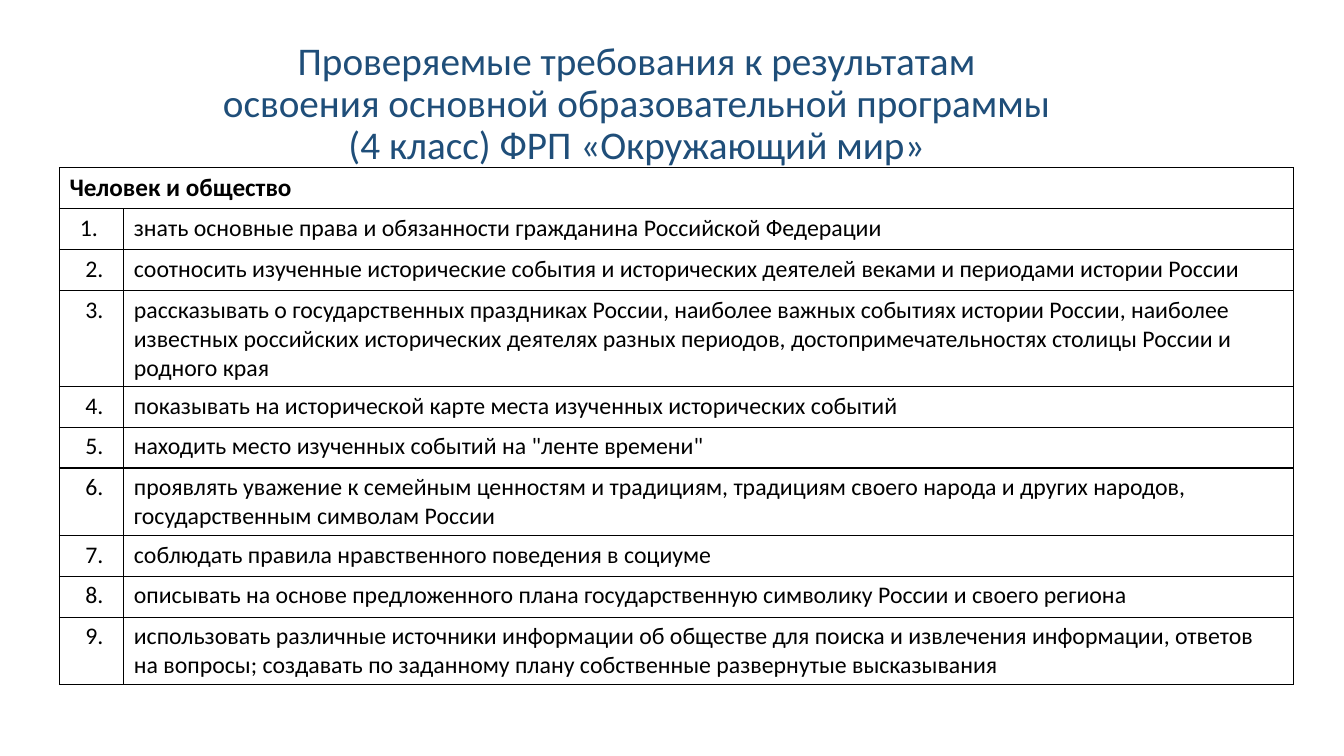
from lxml.etree import SubElement
from pptx import Presentation
from pptx.dml.color import RGBColor
from pptx.enum.text import MSO_ANCHOR, PP_ALIGN
from pptx.oxml.ns import qn
from pptx.util import Cm, Pt

FONT = "Calibri"
TITLE_BLUE = RGBColor(0x1F, 0x4E, 0x79)
BLACK = RGBColor(0, 0, 0)

TITLE_LINES = [
    "Проверяемые требования к результатам ",
    "освоения основной образовательной программы ",
    "(4 класс) ФРП «Окружающий мир» ",
]
SECTION = "Человек и общество"
REQUIREMENTS = [
    "знать основные права и обязанности гражданина Российской Федерации",
    "соотносить изученные исторические события и исторических деятелей веками "
    "и периодами истории России",
    "рассказывать о государственных праздниках России, наиболее важных событиях "
    "истории России, наиболее известных российских исторических деятелях разных "
    "периодов, достопримечательностях столицы России и родного края",
    "показывать на исторической карте места изученных исторических событий",
    'находить место изученных событий на "ленте времени"',
    "проявлять уважение к семейным ценностям и традициям, традициям своего народа "
    "и других народов, государственным символам России",
    "соблюдать правила нравственного поведения в социуме",
    "описывать на основе предложенного плана государственную символику России "
    "и своего региона",
    "использовать различные источники информации об обществе для поиска и "
    "извлечения информации, ответов на вопросы; создавать по заданному плану "
    "собственные развернутые высказывания",
]
NUMBER_WIDTH = Cm(1.62)
ROW_HEIGHT = Cm(1.03)


def add_run(paragraph, text, size, color, bold=False):
    run = paragraph.add_run()
    run.text = text
    run.font.name = FONT
    run.font.size = Pt(size)
    run.font.bold = bold
    run.font.color.rgb = color


def add_title(slide, left, top, width, height):
    frame = slide.shapes.add_textbox(left, top, width, height).text_frame
    frame.word_wrap = True
    frame.vertical_anchor = MSO_ANCHOR.MIDDLE
    paragraph = frame.paragraphs[0]
    paragraph.alignment = PP_ALIGN.CENTER
    paragraph.line_spacing = 0.9
    for index, line in enumerate(TITLE_LINES):
        if index:
            paragraph.add_line_break()
        add_run(paragraph, line, 28, TITLE_BLUE)


def add_borders(cell):
    """Draw a thin black line on all four sides; call before setting the fill."""
    properties = cell._tc.get_or_add_tcPr()
    for side in ("a:lnL", "a:lnR", "a:lnT", "a:lnB"):
        line = SubElement(properties, qn(side), w=str(Pt(1)))
        fill = SubElement(line, qn("a:solidFill"))
        SubElement(fill, qn("a:srgbClr"), val=str(BLACK))


def fill_cell(cell, text, size=17, bold=False, alignment=PP_ALIGN.LEFT):
    paragraph = cell.text_frame.paragraphs[0]
    paragraph.alignment = alignment
    add_run(paragraph, text, size, BLACK, bold)


def add_requirements(slide, left, top, width):
    row_count = len(REQUIREMENTS) + 1
    table = slide.shapes.add_table(
        row_count, 2, left, top, width, ROW_HEIGHT * row_count).table
    table.first_row = False
    table.horz_banding = False
    table.columns[0].width = NUMBER_WIDTH
    table.columns[1].width = width - NUMBER_WIDTH
    for cell in table.iter_cells():
        add_borders(cell)
        cell.fill.background()

    table.cell(0, 0).merge(table.cell(0, 1))
    fill_cell(table.cell(0, 0), SECTION, size=18, bold=True)
    for number, requirement in enumerate(REQUIREMENTS, start=1):
        label = "1. " if number == 1 else f" {number}."
        fill_cell(table.cell(number, 0), label, alignment=PP_ALIGN.CENTER)
        fill_cell(table.cell(number, 1), requirement)


def main():
    presentation = Presentation()
    presentation.slide_width = Cm(33.87)
    presentation.slide_height = Cm(19.05)
    slide = presentation.slides.add_slide(presentation.slide_layouts[6])
    add_title(slide, Cm(1.55), Cm(0.8), Cm(29.2), Cm(3.68))
    add_requirements(slide, Cm(1.5), Cm(4.23), Cm(31.1))
    presentation.save("out.pptx")


if __name__ == "__main__":
    main()
